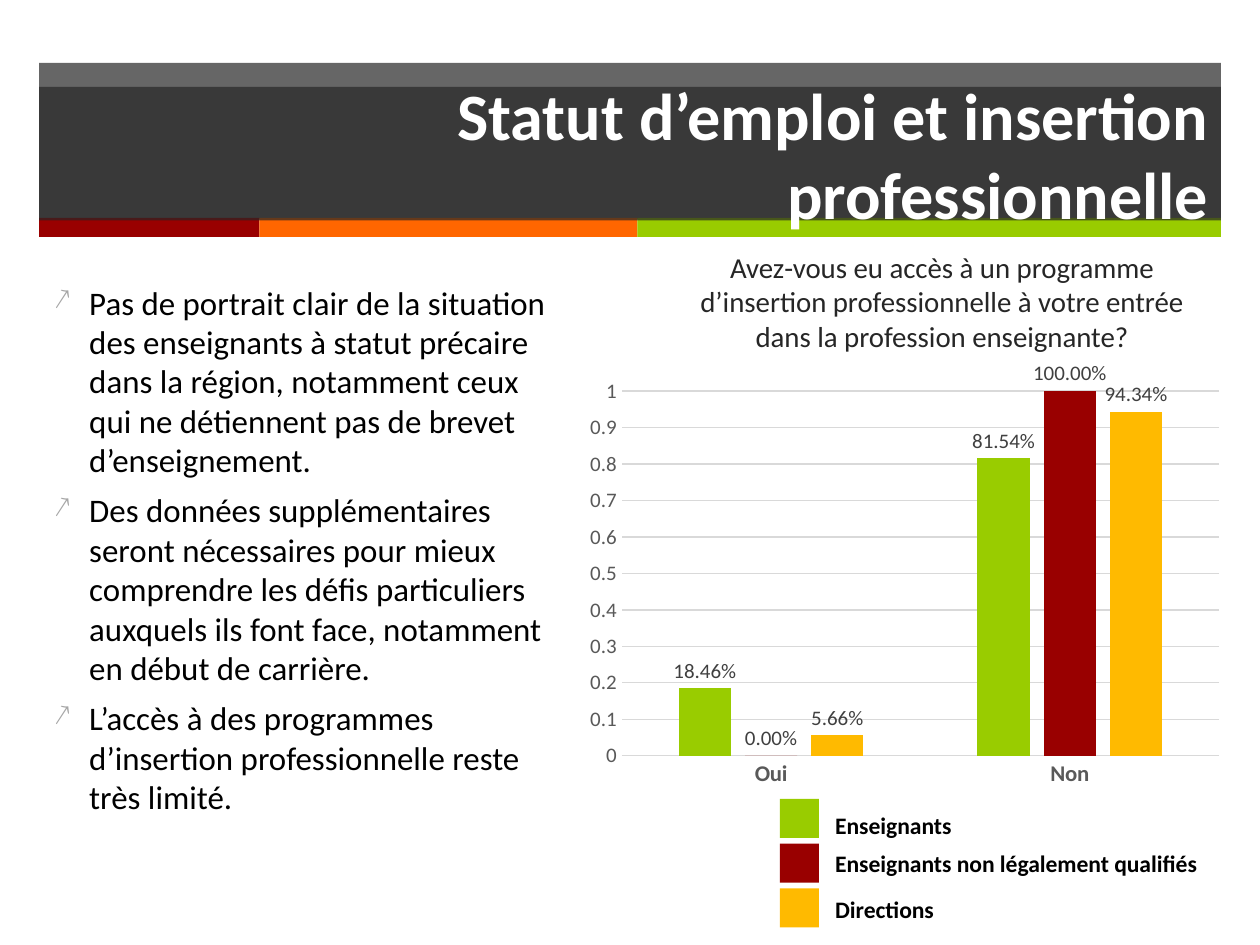
from typing import NamedTuple, Optional

from lxml import etree
from pptx import Presentation
from pptx import util as u
from pptx.chart.data import CategoryChartData
from pptx.dml.color import RGBColor
from pptx.enum import chart as charts, shapes, text
from pptx.oxml import ns

FONT = "Calibri"
GREEN, RED, ORANGE, AMBER = "99CC00", "990000", "FF6600", "FFBA00"
DARK, BLACK, WHITE = "262626", "000000", "FFFFFF"
GRID, GREY = "D9D9D9", "595959"


class Box(NamedTuple):
    left: float
    top: float
    width: float
    height: float

    def lengths(self):
        return [u.Inches(value) for value in self]


class Band(NamedTuple):
    box: Box
    color: str
    opacity: Optional[int] = None


class Group(NamedTuple):
    name: str
    color: str
    values: tuple
    label: Box


BANDS = [
    Band(Box(0.31, 0.5, 9.38, 1.24), DARK, 70),
    Band(Box(0.31, 1.73, 1.75, 0.15), RED),
    Band(Box(2.06, 1.73, 3, 0.15), ORANGE),
    Band(Box(5.06, 1.73, 4.63, 0.15), GREEN),
]
GROUPS = [
    Group("Enseignants", GREEN, (0.1846, 0.8154), Box(6.53, 6.39, 1.25, 0.33)),
    Group("Enseignants non légalement qualifiés", RED, (0, 1), Box(6.53, 6.69, 3.45, 0.33)),
    Group("Directions", AMBER, (0.0566, 0.9434), Box(6.53, 7.05, 1.12, 0.33)),
]
POINTS = [
    "Pas de portrait clair de la situation des enseignants à statut précaire dans la région, "
    "notamment ceux qui ne détiennent pas de brevet d’enseignement.",
    "Des données supplémentaires seront nécessaires pour mieux comprendre les défis "
    "particuliers auxquels ils font face, notamment en début de carrière.",
    "L’accès à des programmes d’insertion professionnelle reste très limité.",
]


def rgb(color: str) -> RGBColor:
    return RGBColor.from_string(color)


def style_font(font, size: float, color: str, bold: bool = False) -> None:
    font.name, font.size, font.bold = FONT, u.Pt(size), bold
    font.color.rgb = rgb(color)


def add_band(slide, band: Band):
    shape = slide.shapes.add_shape(shapes.MSO_SHAPE.RECTANGLE, *band.box.lengths())
    shape.shadow.inherit = False
    shape.line.fill.background()
    shape.fill.solid()
    shape.fill.fore_color.rgb = rgb(band.color)
    if band.opacity is not None:
        color = shape.fill._xPr.find(".//" + ns.qn("a:srgbClr"))
        etree.SubElement(color, ns.qn("a:alpha"), val=str(band.opacity * 1000))
    return shape


def add_text_box(slide, box: Box, wrap: bool = True):
    frame = slide.shapes.add_textbox(*box.lengths()).text_frame
    frame.word_wrap = wrap
    return frame


def add_run(paragraph, words: str, size: float, color: str, bold: bool = False) -> None:
    run = paragraph.add_run()
    run.text = words
    style_font(run.font, size, color, bold)


def add_bullet(paragraph, symbol: str, color: str) -> None:
    properties = paragraph._p.get_or_add_pPr()
    properties.set("marL", str(u.Inches(0.5)))
    properties.set("indent", str(u.Inches(-0.28)))
    bullet_color = etree.SubElement(properties, ns.qn("a:buClr"))
    etree.SubElement(bullet_color, ns.qn("a:srgbClr"), val=color)
    etree.SubElement(properties, ns.qn("a:buSzPct"), val="90000")
    etree.SubElement(properties, ns.qn("a:buChar"), char=symbol)


def add_access_chart(slide, box: Box) -> None:
    data = CategoryChartData()
    data.categories = ["Oui", "Non"]
    for group in GROUPS:
        data.add_series(group.name, group.values)
    chart = slide.shapes.add_chart(
        charts.XL_CHART_TYPE.COLUMN_CLUSTERED, *box.lengths(), data).chart
    chart.has_legend = chart.has_title = False
    style_font(chart.font, 10, BLACK)

    # Axes
    category, value = chart.category_axis, chart.value_axis
    for axis, size, bold in ((category, 13, True), (value, 12, False)):
        axis.major_tick_mark = axis.minor_tick_mark = charts.XL_TICK_MARK.NONE
        style_font(axis.tick_labels.font, size, GREY, bold)
    value.minimum_scale, value.maximum_scale, value.major_unit = 0, 1, 0.1
    value.tick_labels.number_format = "General"
    value.tick_labels.number_format_is_linked = False
    value.format.line.fill.background()
    for line in (category.format.line, value.major_gridlines.format.line):
        line.color.rgb, line.width = rgb(GRID), u.Pt(0.75)

    # Columns and their labels
    plot = chart.plots[0]
    plot.gap_width, plot.overlap, plot.vary_by_categories = 219, -27, False
    for series, group in zip(plot.series, GROUPS):
        series.format.fill.solid()
        series.format.fill.fore_color.rgb = rgb(group.color)
        labels = series.data_labels
        labels.show_value = True
        labels.number_format, labels.number_format_is_linked = "0.00%", False
        labels.position = charts.XL_LABEL_POSITION.OUTSIDE_END
        style_font(labels.font, 12, "404040")


def main() -> None:
    presentation = Presentation()
    presentation.slide_width, presentation.slide_height = u.Inches(10), u.Inches(7.5)
    slide = presentation.slides.add_slide(presentation.slide_layouts[6])

    # Header
    for band in BANDS:
        add_band(slide, band)
    title = add_band(slide, Band(Box(0.31, 0.69, 9.38, 1.06), DARK, 70)).text_frame
    title.word_wrap = True
    title.vertical_anchor = text.MSO_ANCHOR.MIDDLE
    title.paragraphs[0].alignment = text.PP_ALIGN.RIGHT
    add_run(title.paragraphs[0], "Statut d’emploi et insertion professionnelle", 37.8, WHITE, True)

    # Findings
    findings = add_text_box(slide, Box(0.11, 2.19, 4.35, 4.47))
    for index, point in enumerate(POINTS):
        paragraph = findings.add_paragraph() if index else findings.paragraphs[0]
        paragraph.space_before = u.Pt(6)
        add_bullet(paragraph, "↗", "A6A6A6")
        add_run(paragraph, point, 18.8, BLACK)

    # Question and chart
    question = add_text_box(slide, Box(5.3, 1.93, 4.35, 0.86)).paragraphs[0]
    question.alignment = text.PP_ALIGN.CENTER
    question.space_before = u.Pt(20)
    add_run(question, "Avez-vous eu accès à un programme d’insertion professionnelle "
            "à votre entrée dans la profession enseignante?", 16.5, DARK)
    add_access_chart(slide, Box(4.58, 2.87, 5.2, 3.45))

    # Legend
    for index, group in enumerate(GROUPS):
        add_band(slide, Band(Box(6.19, 6.34 + 0.355 * index, 0.31, 0.31), group.color))
        label = add_text_box(slide, group.label, wrap=False)
        label.auto_size = text.MSO_AUTO_SIZE.SHAPE_TO_FIT_TEXT
        add_run(label.paragraphs[0], group.name, 13.5, BLACK, True)

    presentation.save("out.pptx")


if __name__ == "__main__":
    main()
